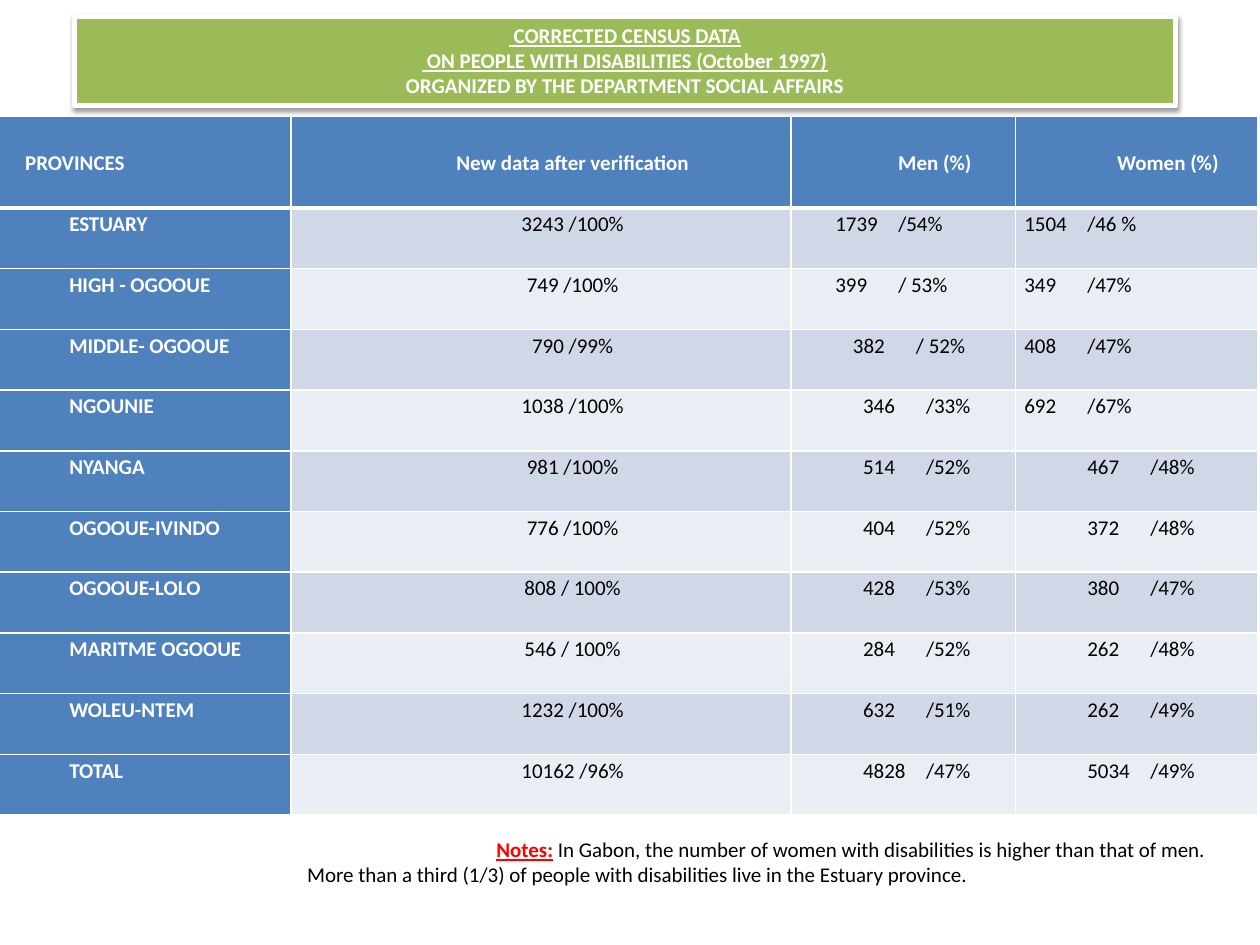
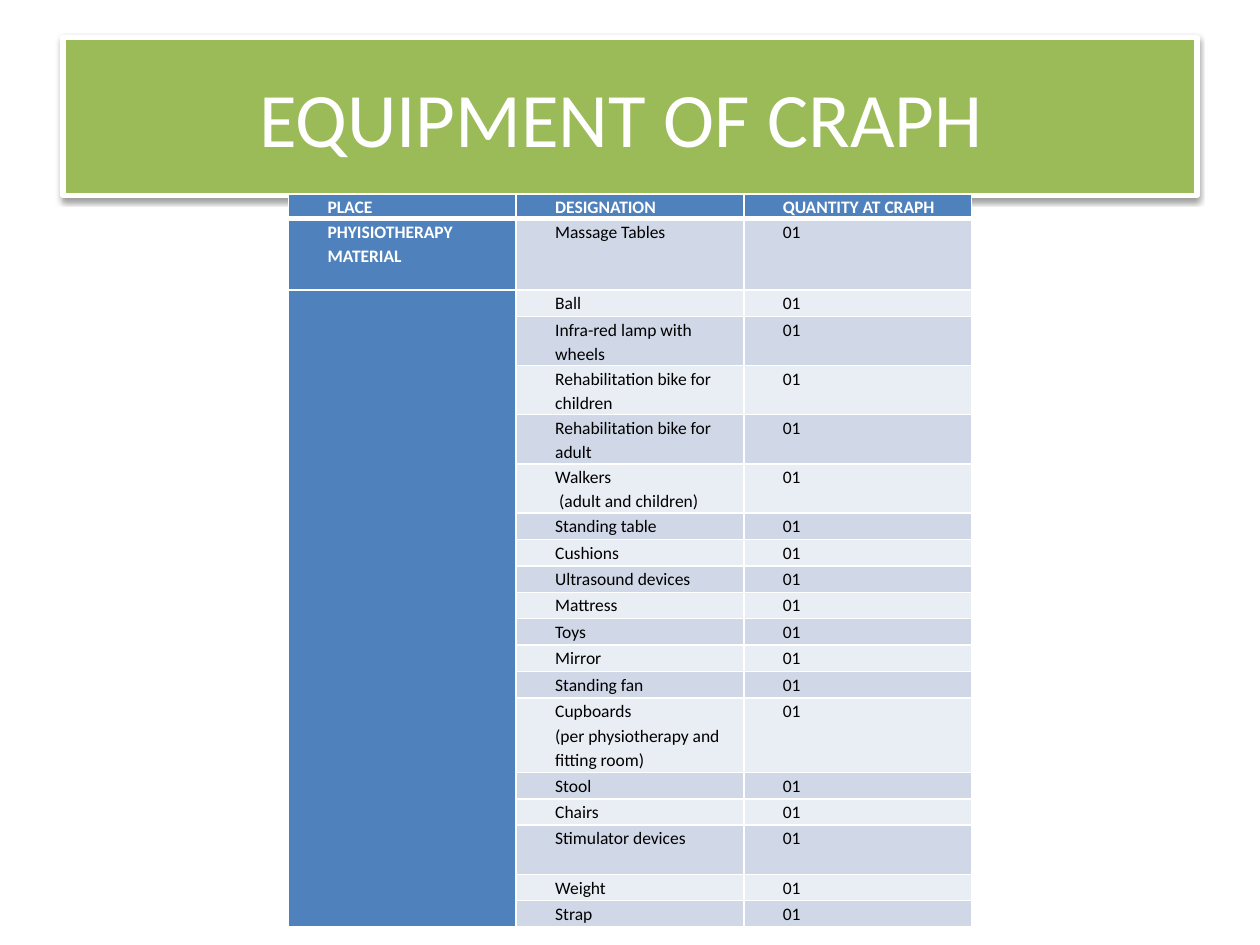
"""Build the census and equipment slides with a shared banner and table style."""
from dataclasses import dataclass

from lxml.etree import SubElement
from pptx import Presentation
from pptx.dml.color import RGBColor
from pptx.enum.shapes import MSO_SHAPE
from pptx.enum.text import MSO_ANCHOR, PP_ALIGN
from pptx.oxml.ns import qn
from pptx.util import Inches, Pt

WHITE = RGBColor(0xFF, 0xFF, 0xFF)
BLACK = RGBColor(0x00, 0x00, 0x00)
RED = RGBColor(0xFF, 0x00, 0x00)
GREEN = RGBColor(0x9B, 0xBB, 0x59)
BLUE = RGBColor(0x4F, 0x81, 0xBD)
BANDS = (RGBColor(0xD0, 0xD8, 0xE8), RGBColor(0xE9, 0xED, 0xF4))
FONT = "Calibri"
GRID = Inches(0.1)

CENSUS = [
    ("PROVINCES", "New data after verification", "Men (%)", "Women (%)"),
    ("ESTUARY", "3243 /100%", "1739\t/54%", "1504\t/46 %"),
    ("HIGH - OGOOUE", "749 /100%", "399\t/ 53%", "349\t/47%"),
    ("MIDDLE- OGOOUE", "790 /99%", "382\t/ 52%", "408\t/47%"),
    ("NGOUNIE", "1038 /100%", "346\t/33%", "692\t/67%"),
    ("NYANGA", "981 /100%", "514\t/52%", "467\t/48%"),
    ("OGOOUE-IVINDO", "776 /100%", "404\t/52%", "372\t/48%"),
    ("OGOOUE-LOLO", "808 / 100%", "428\t/53%", "380\t/47%"),
    ("MARITME OGOOUE", "546 / 100%", "284\t/52%", "262\t/48%"),
    ("WOLEU-NTEM", "1232 /100%", "632\t/51%", "262\t/49%"),
    ("TOTAL", "10162 /96%", "4828\t/47%", "5034\t/49%"),
]
MEN_INDENTS = {1: 2.8, 2: 2.8, 3: 4.2}
EQUIPMENT = [
    ("Massage Tables", 5.7),
    ("Ball", 2.1),
    ("Infra-red lamp with wheels", 3.9),
    ("Rehabilitation bike for children", 3.9),
    ("Rehabilitation bike for adult", 3.9),
    ("Walkers\n (adult and children)", 3.9),
    ("Standing table", 2.1),
    ("Cushions", 2.1),
    ("Ultrasound devices", 2.1),
    ("Mattress", 2.1),
    ("Toys", 2.1),
    ("Mirror", 2.1),
    ("Standing fan", 2.1),
    ("Cupboards\n(per physiotherapy and fitting room)", 5.9),
    ("Stool", 2.1),
    ("Chairs", 2.1),
    ("Stimulator devices", 3.9),
    ("Weight", 2.1),
    ("Strap", 2.1),
]


def units(count):
    return round(count * GRID)


@dataclass
class Layout:
    indent: float = 0
    align: PP_ALIGN = PP_ALIGN.LEFT
    tab: float = 0


def census_layout(row, column):
    if row == 0 and column == 0:
        return Layout(1.5)
    if row == 0 or column == 1:
        return Layout(5, PP_ALIGN.CENTER)
    if column == 2:
        return Layout(MEN_INDENTS.get(row, 5), tab=7.3)
    if column == 3:
        return Layout(0 if row < 5 else 5, tab=8.2)
    return Layout(5)


def equipment_layout(row, column):
    return Layout(2.5)


class SlideBuilder:
    def __init__(self):
        self.deck = Presentation()
        self.deck.slide_width, self.deck.slide_height = units(100), units(75)
        self.page = None

    def new_page(self):
        self.page = self.deck.slides.add_slide(self.deck.slide_layouts[6])

    def style(self, para, size, color, bold=False, layout=Layout()):
        para.alignment = layout.align
        properties = para._p.get_or_add_pPr()
        properties.set("marL", str(units(layout.indent)))
        properties.set("indent", "0")
        if layout.tab:
            stops = SubElement(properties, qn("a:tabLst"))
            SubElement(stops, qn("a:tab"), pos=str(units(layout.tab)), algn="l")
        font = para.font
        font.name, font.size, font.bold = FONT, Pt(size), bold
        font.color.rgb = color

    def banner(self, area, lines, size, bold=False, underlined=0, anchor=MSO_ANCHOR.MIDDLE):
        box = self.page.shapes.add_shape(MSO_SHAPE.RECTANGLE, *map(units, area))
        box.fill.solid()
        box.fill.fore_color.rgb = GREEN
        box.line.color.rgb = WHITE
        box.line.width = Pt(3)
        box.shadow.inherit = False
        effects = box._element.spPr.find(qn("a:effectLst"))
        shadow = SubElement(effects, qn("a:outerShdw"), blurRad=str(Pt(3.1)),
                            dist=str(Pt(1.6)), dir="5400000", rotWithShape="0")
        tint = SubElement(shadow, qn("a:srgbClr"), val=str(BLACK))
        SubElement(tint, qn("a:alpha"), val="38000")
        frame = box.text_frame
        frame.word_wrap = True
        frame.vertical_anchor = anchor
        frame.text = "\n".join(lines)
        for index, para in enumerate(frame.paragraphs):
            self.style(para, size, WHITE, bold, Layout(align=PP_ALIGN.CENTER))
            para.font.underline = index < underlined

    def borders(self, cell, row):
        properties = cell._tc.get_or_add_tcPr()
        for side in "LRTB":
            heavy = (row, side) in ((0, "B"), (1, "T"))
            line = SubElement(properties, qn(f"a:ln{side}"), w=str(Pt(3 if heavy else 1)))
            fill = SubElement(line, qn("a:solidFill"))
            SubElement(fill, qn("a:srgbClr"), val=str(WHITE))

    def table(self, corner, widths, heights, rows, size, inset, layout_for):
        area = (*corner, sum(widths), sum(heights))
        table = self.page.shapes.add_table(len(rows), len(widths), *map(units, area)).table
        for column, width in zip(table.columns, widths):
            column.width = units(width)
        for line, height in zip(table.rows, heights):
            line.height = units(height)
        for row, texts in enumerate(rows):
            for column, text in enumerate(texts):
                cell = table.cell(row, column)
                heading = row == 0 or column == 0
                cell.margin_left = cell.margin_right = units(inset)
                cell.margin_top = cell.margin_bottom = 0
                cell.vertical_anchor = MSO_ANCHOR.MIDDLE if row == 0 else MSO_ANCHOR.TOP
                self.borders(cell, row)
                cell.fill.solid()
                cell.fill.fore_color.rgb = BLUE if heading else BANDS[(row - 1) % 2]
                cell.text_frame.text = text
                for para in cell.text_frame.paragraphs:
                    self.style(para, size, WHITE if heading else BLACK, heading,
                               layout_for(row, column))
                    para.line_spacing = 1.15
        return table

    def notes(self, area, label, first, second):
        box = self.page.shapes.add_textbox(*map(units, area))
        frame = box.text_frame
        frame.word_wrap = True
        opening = frame.paragraphs[0]
        self.style(opening, 12, BLACK, layout=Layout(34.9, PP_ALIGN.CENTER))
        span = opening.add_run()
        span.text = label
        span.font.bold = span.font.underline = True
        span.font.color.rgb = RED
        opening.add_run().text = first
        closing = frame.add_paragraph()
        closing.text = second
        self.style(closing, 12, BLACK, layout=Layout(1, PP_ALIGN.CENTER))


def census_slide(builder):
    builder.new_page()
    builder.table((-0.2, 9.2), (23.3, 39.7, 17.8, 19.2), [7.3] + [4.82] * 10,
                  CENSUS, 12, 0.7, census_layout)
    builder.notes((0.2, 65.9, 99.8, 7.1), "Notes:",
                  " In Gabon, the number of women with disabilities is higher than that of men.",
                  "More than a third (1/3) of people with disabilities live in the Estuary province.")
    builder.banner((5.9, 1.3, 87.4, 7.1),
                   (" CORRECTED CENSUS DATA", " ON PEOPLE WITH DISABILITIES (October 1997)",
                    "ORGANIZED BY THE DEPARTMENT SOCIAL AFFAIRS"),
                   12, bold=True, underlined=2, anchor=MSO_ANCHOR.TOP)


def equipment_slide(builder):
    builder.new_page()
    builder.banner((5, 3, 90, 12.5), ("EQUIPMENT OF CRAPH ",), 44)
    rows = [("PLACE", "DESIGNATION", "QUANTITY AT CRAPH")]
    for index, (item, height) in enumerate(EQUIPMENT):
        rows.append(("" if index else "PHYISIOTHERAPY MATERIAL", item, "01"))
    heights = [1.9] + [height for item, height in EQUIPMENT]
    table = builder.table((22.9, 15.4), [18.07] * 3, heights, rows, 10, 0.6, equipment_layout)
    table.cell(2, 0).merge(table.cell(len(rows) - 1, 0))


def main():
    builder = SlideBuilder()
    census_slide(builder)
    equipment_slide(builder)
    builder.deck.save("out.pptx")


if __name__ == "__main__":
    main()
